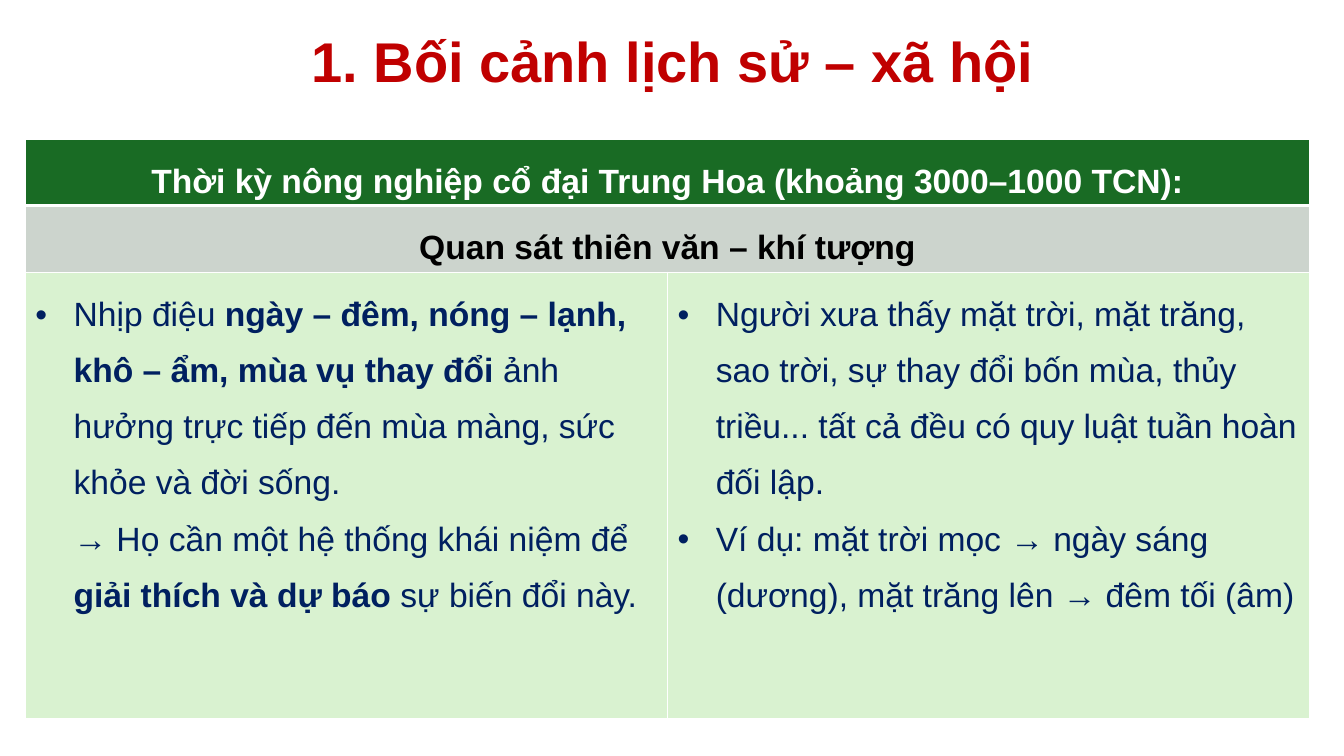
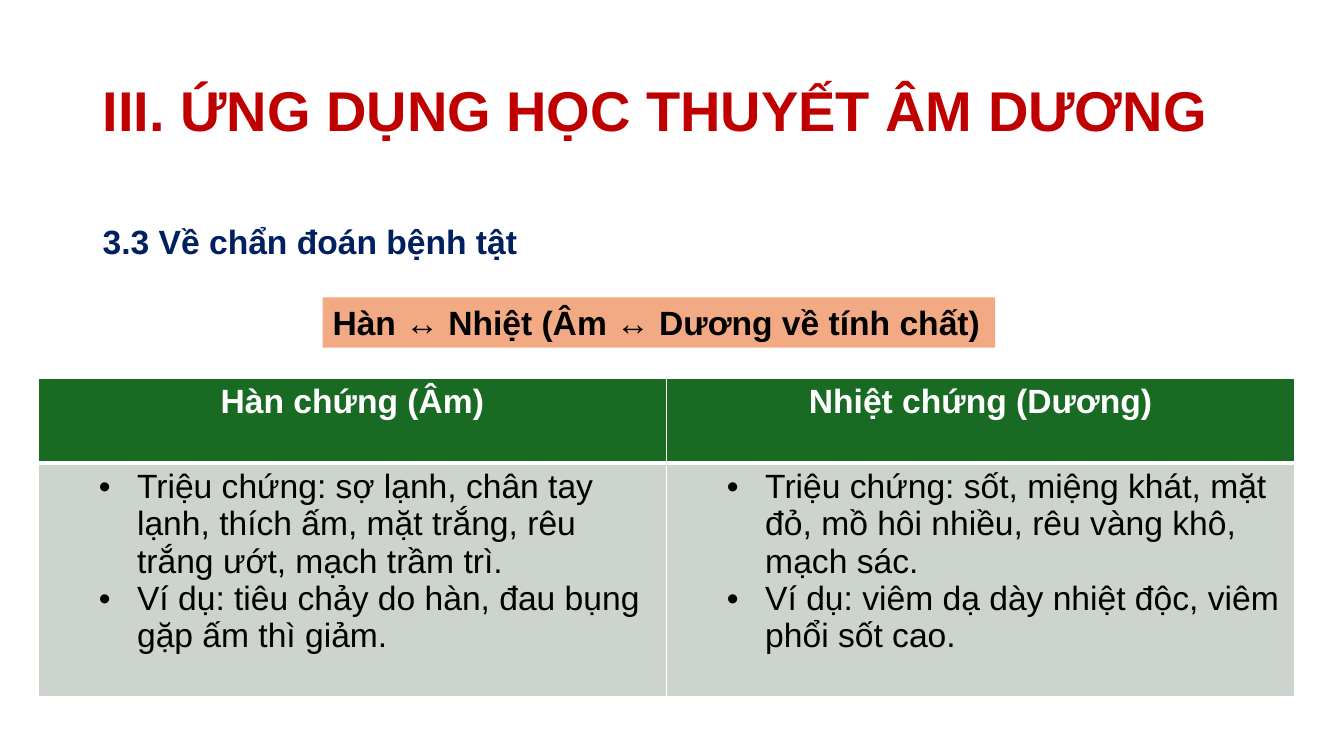
from pptx import Presentation
from pptx.dml.color import RGBColor
from pptx.enum.shapes import MSO_SHAPE
from pptx.enum.text import MSO_ANCHOR, MSO_AUTO_SIZE, PP_ALIGN
from pptx.oxml import parse_xml
from pptx.oxml.ns import nsdecls
from pptx.util import Inches, Pt

LEFT, CENTER = PP_ALIGN.LEFT, PP_ALIGN.CENTER
TOP, MIDDLE = MSO_ANCHOR.TOP, MSO_ANCHOR.MIDDLE
NO_FIT = MSO_AUTO_SIZE.NONE
RECT = MSO_SHAPE.RECTANGLE
COLORS = {
    "title": "C00000", "navy": "002060", "black": "000000", "white": "FFFFFF",
    "header": "196B24", "grey": "CCD4CD", "mint": "D9F2D0", "peach": "F2AA84",
}
FONT = "Arial"
TITLE_ONLY = 5


def rgb(name):
    return RGBColor.from_string(COLORS[name])


def write(tf, *paragraphs, size=24, color="black", bold=False, align=LEFT,
          spacing=1, indent=None, level=0):
    """Fill a text frame; ** toggles bold, a newline breaks the line,
    and an indent (in inches) makes bulleted paragraphs."""
    tf.word_wrap = True
    for i, text in enumerate(paragraphs):
        p = tf.paragraphs[0] if i == 0 else tf.add_paragraph()
        p.alignment, p.line_spacing, p.level = align, spacing, level
        if indent:
            pPr = p._p.get_or_add_pPr()
            pPr.set("marL", str(Inches(indent)))
            pPr.set("indent", str(Inches(-0.38)))
            pPr.append(parse_xml(f'<a:buFont {nsdecls("a")} typeface="{FONT}"/>'))
            pPr.append(parse_xml(f'<a:buChar {nsdecls("a")} char="•"/>'))
        for j, part in enumerate(text.split("**")):
            for k, line in enumerate(part.split("\n")):
                if k:
                    p.add_line_break()
                if line:
                    r = p.add_run()
                    r.text = line
                    r.font.name, r.font.size = FONT, Pt(size)
                    r.font.bold = bold != (j % 2 == 1)
                    r.font.color.rgb = rgb(color)


prs = Presentation()
prs.slide_width, prs.slide_height = Inches(13.33), Inches(7.5)

header = dict(color="white", bold=True, align=CENTER)
wide = dict(spacing=1.5)
bullets = dict(color="navy", indent=0.38, **wide)
symptoms = dict(indent=0.88, level=1)

# Each table row: fill, text format, cells; a single cell spans both columns.
pages = [
    dict(
        title="1. Bối cảnh lịch sử – xã hội", title_box=(0.92, 0.14, 11.5, 1),
        align=CENTER, table_box=(0.25, 1.38, 12.74), heights=(0.66, 0.66, 4.43),
        rows=[
            ("header", header | wide,
             [["Thời kỳ nông nghiệp cổ đại Trung Hoa (khoảng 3000–1000 TCN):"]]),
            ("grey", header | wide | dict(color="black"),
             [["Quan sát thiên văn – khí tượng"]]),
            ("mint", bullets, [
                ["Nhịp điệu **ngày – đêm, nóng – lạnh, khô – ẩm, mùa vụ thay đổi** ảnh "
                 "hưởng trực tiếp đến mùa màng, sức khỏe và đời sống.\n"
                 "→ Họ cần một hệ thống khái niệm để **giải thích và dự báo** "
                 "sự biến đổi này."],
                ["Người xưa thấy mặt trời, mặt trăng, sao trời, sự thay đổi bốn mùa, "
                 "thủy triều... tất cả đều có quy luật tuần hoàn đối lập.",
                 "Ví dụ: mặt trời mọc → ngày sáng (dương), mặt trăng lên → "
                 "đêm tối (âm)"],
            ]),
        ],
    ),
    dict(
        title="III. ỨNG DỤNG HỌC THUYẾT ÂM DƯƠNG", title_box=(0.92, 0.4, 11.5, 1.45),
        align=LEFT, table_box=(0.38, 3.75, 12.46), heights=(0.84, 2.32),
        rows=[
            ("header", header, [["Hàn chứng (Âm)"], ["Nhiệt chứng (Dương)"]]),
            ("grey", symptoms, [
                ["Triệu chứng: sợ lạnh, chân tay lạnh, thích ấm, mặt trắng, "
                 "rêu trắng ướt, mạch trầm trì.",
                 "Ví dụ: tiêu chảy do hàn, đau bụng gặp ấm thì giảm."],
                ["Triệu chứng: sốt, miệng khát, mặt đỏ, mồ hôi nhiều, "
                 "rêu vàng khô, mạch sác.",
                 "Ví dụ: viêm dạ dày nhiệt độc, viêm phổi sốt cao."],
            ]),
        ],
    ),
]

for page in pages:
    s = prs.slides.add_slide(prs.slide_layouts[TITLE_ONLY])
    title = s.shapes.title
    title.left, title.top, title.width, title.height = map(Inches, page["title_box"])
    tf = title.text_frame
    tf.auto_size, tf.vertical_anchor = NO_FIT, MIDDLE
    write(tf, page["title"], size=40, color="title", bold=True,
          align=page["align"], spacing=0.9)

    heights = page["heights"]
    x, y, w = page["table_box"]
    table = s.shapes.add_table(len(heights), 2, Inches(x), Inches(y), Inches(w),
                               Inches(sum(heights))).table
    table.horz_banding = False
    for i, (fill, style, texts) in enumerate(page["rows"]):
        table.rows[i].height = Inches(heights[i])
        for j in range(2):
            cell = table.cell(i, j)
            tcPr = cell._tc.get_or_add_tcPr()
            for side in "LRTB":
                heavy = (i, side) in ((0, "B"), (1, "T"))
                tcPr.append(parse_xml(
                    f'<a:ln{side} {nsdecls("a")} w="{Pt(3 if heavy else 1)}">'
                    f'<a:solidFill><a:srgbClr val="{COLORS["white"]}"/></a:solidFill>'
                    f'</a:ln{side}>'))
            cell.fill.solid()
            cell.fill.fore_color.rgb = rgb(fill)
            cell.vertical_anchor = TOP
        if len(texts) == 1:
            table.cell(i, 0).merge(table.cell(i, 1))
        for j, paragraphs in enumerate(texts):
            write(table.cell(i, j).text_frame, *paragraphs, **style)

# The last slide also has a section heading and a highlighted contrast.
heading = s.shapes.add_textbox(Inches(0.92), Inches(2.14), Inches(6.67), Inches(0.5))
write(heading.text_frame, "3.3 Về chẩn đoán bệnh tật", color="navy", bold=True)

contrast = s.shapes.add_shape(RECT, Inches(3.2), Inches(2.95), Inches(6.67), Inches(0.5))
contrast.shadow.inherit = False
contrast.fill.solid()
contrast.fill.fore_color.rgb = rgb("peach")
contrast.line.fill.background()
contrast.text_frame.vertical_anchor = TOP
write(contrast.text_frame, "Hàn ↔ Nhiệt (Âm ↔ Dương về tính chất)", bold=True)

prs.save("out.pptx")
